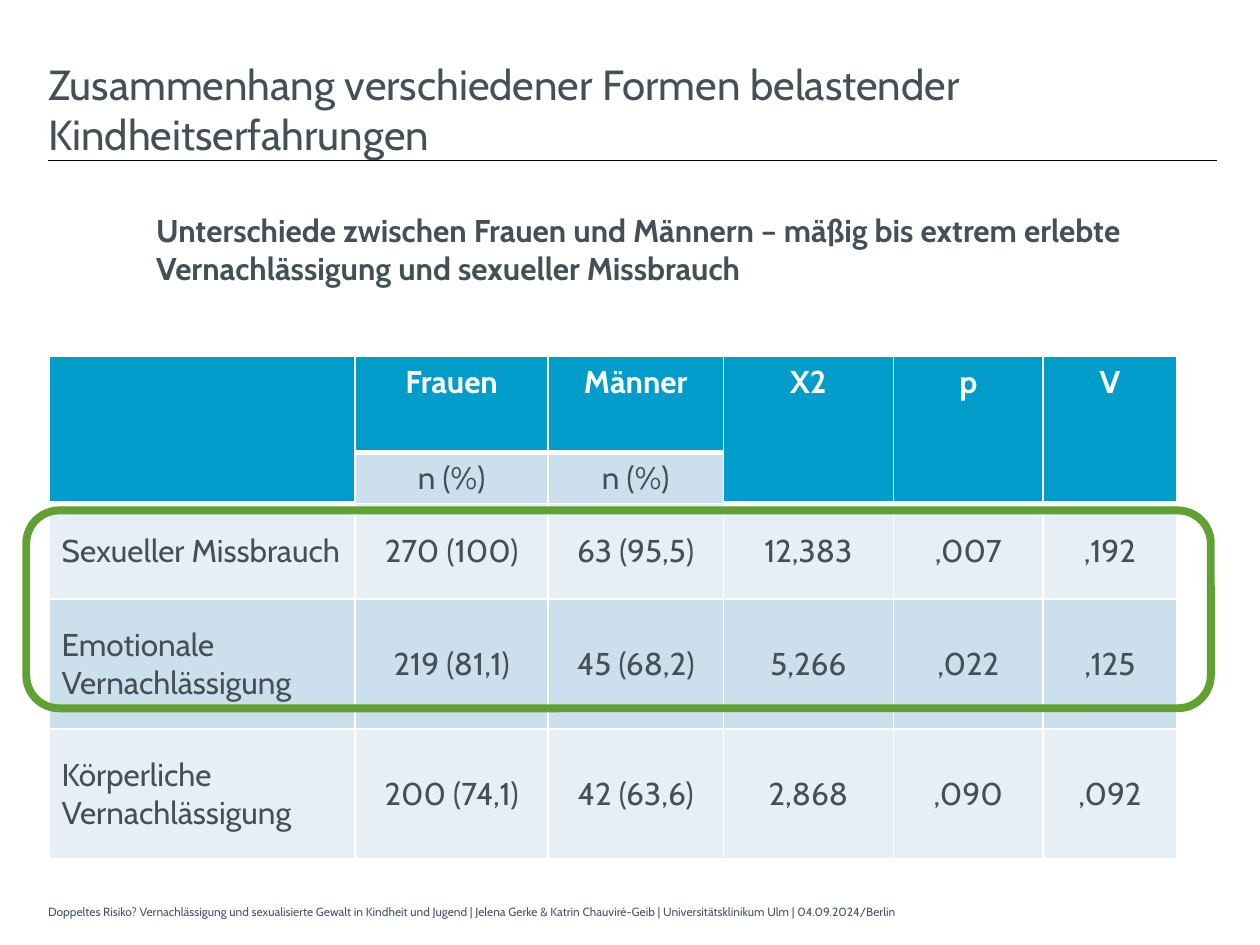
from lxml import etree
from pptx import Presentation
from pptx.dml.color import RGBColor
from pptx.enum.shapes import MSO_CONNECTOR, MSO_SHAPE
from pptx.enum.text import MSO_ANCHOR, MSO_AUTO_SIZE, PP_ALIGN
from pptx.oxml.ns import qn
from pptx.util import Cm, Pt

LEFT, CENTER = PP_ALIGN.LEFT, PP_ALIGN.CENTER
TOP, MIDDLE = MSO_ANCHOR.TOP, MSO_ANCHOR.MIDDLE
NO_AUTOFIT = MSO_AUTO_SIZE.NONE
STRAIGHT = MSO_CONNECTOR.STRAIGHT
ROUND_RECT = MSO_SHAPE.ROUNDED_RECTANGLE

HEADER = ["", "Frauen", "Männer", "X2", "p", "V"]
SUBHEADER = ["", "n (%)", "n (%)", "", "", ""]
BODY = [
    ["Sexueller Missbrauch", "270 (100)", "63 (95,5)", "12,383", ",007", ",192"],
    ["Emotionale Vernachlässigung", "219 (81,1)", "45 (68,2)", "5,266", ",022", ",125"],
    ["Körperliche Vernachlässigung", "200 (74,1)", "42 (63,6)", "2,868", ",090", ",092"],
]
MERGED_COLS = (0, 3, 4, 5)
COL_WIDTHS = [6.17, 3.89, 3.53, 3.43, 3.02, 2.69]
ROW_HEIGHTS = [1.93, 1.02, 1.93, 2.62, 2.62]


def rgb(value):
    return RGBColor.from_string(value)


class Deck:
    FONT = "Cabin"
    TEXT = "445055"
    WHITE = "FFFFFF"
    BLUE = "009DCA"
    BANDS = ("E7EFF6", "CCDFEC")

    def __init__(self, prs):
        self.s = prs.slides.add_slide(prs.slide_layouts[5])

    def set_text(self, tf, text, size, color=TEXT, bold=False, align=LEFT):
        p = tf.paragraphs[0]
        p.text = text
        p.alignment = align
        f = p.font
        f.name, f.size, f.bold = self.FONT, Pt(size), bold
        f.color.rgb = rgb(color)

    def frame(self, sp, margins, anchor):
        tf = sp.text_frame
        tf.word_wrap = True
        tf.auto_size = NO_AUTOFIT
        tf.vertical_anchor = anchor
        tf.margin_left, tf.margin_top, tf.margin_right, tf.margin_bottom = map(Cm, margins)
        return tf

    def title(self, text, box, size):
        sp = self.s.shapes.title
        sp.left, sp.top, sp.width, sp.height = map(Cm, box)
        self.set_text(self.frame(sp, (0, 0.15, 0, 0.1), TOP), text, size)

    def text(self, text, box, size, margins=(0, 0.15, 0, 0.1), anchor=TOP, **style):
        sp = self.s.shapes.add_textbox(*map(Cm, box))
        self.set_text(self.frame(sp, margins, anchor), text, size, **style)

    def line(self, ends, color, width):
        c = self.s.shapes.add_connector(STRAIGHT, *map(Cm, ends))
        c.line.color.rgb = rgb(color)
        c.line.width = Pt(width)
        etree.SubElement(c._element.spPr, qn("a:effectLst"))

    def outline(self, box, color, width):
        sp = self.s.shapes.add_shape(ROUND_RECT, *map(Cm, box))
        sp.shadow.inherit = False
        sp.fill.background()
        sp.line.color.rgb = rgb(color)
        sp.line.width = Pt(width)

    def borders(self, cell, top, bottom):
        tcPr = cell._tc.get_or_add_tcPr()
        for side, width in (("L", 1), ("R", 1), ("T", top), ("B", bottom)):
            ln = etree.SubElement(tcPr, qn(f"a:ln{side}"), w=str(Pt(width)))
            fill = etree.SubElement(ln, qn("a:solidFill"))
            etree.SubElement(fill, qn("a:srgbClr"), val=self.WHITE)

    def table(self, rows, left, top):
        size = (Cm(sum(COL_WIDTHS)), Cm(sum(ROW_HEIGHTS)))
        t = self.s.shapes.add_table(len(rows), len(HEADER), Cm(left), Cm(top), *size).table
        for col, width in zip(t.columns, COL_WIDTHS):
            col.width = Cm(width)
        for row, height in zip(t.rows, ROW_HEIGHTS):
            row.height = Cm(height)
        for c in MERGED_COLS:
            t.cell(0, c).merge(t.cell(1, c))
        for r, values in enumerate(rows):
            for c, value in enumerate(values):
                cell = t.cell(r, c)
                head = r == 0 or (r == 1 and c in MERGED_COLS)
                below_head = r == 1 or (r == 2 and c in MERGED_COLS)
                self.borders(cell, 3 if below_head else 1, 3 if head else 1)
                cell.fill.solid()
                cell.fill.fore_color.rgb = rgb(self.BLUE if head else self.BANDS[r % 2])
                cell.vertical_anchor = TOP if head else MIDDLE
                self.set_text(cell.text_frame, value, 18, self.WHITE if head else self.TEXT,
                              head, CENTER if c else LEFT)


def main():
    prs = Presentation()
    prs.slide_width, prs.slide_height = Cm(25.4), Cm(19.05)
    d = Deck(prs)
    d.line((0.97, 3.23, 24.54, 3.23), "000000", 0.5)
    d.text("Doppeltes Risiko? Vernachlässigung und sexualisierte Gewalt in Kindheit und Jugend "
           "| Jelena Gerke & Katrin Chauviré-Geib | Universitätsklinikum Ulm | 04.09.2024/Berlin",
           (0.97, 18.06, 17.63, 0.64), 6.8, (0, 0.13, 0.25, 0.13), MIDDLE, color="44546A")
    d.text("Unterschiede zwischen Frauen und Männern – mäßig bis extrem erlebte "
           "Vernachlässigung und sexueller Missbrauch",
           (3.15, 4.11, 20.57, 2.24), 18, bold=True)
    d.table([HEADER, SUBHEADER, *BODY], 0.99, 7.19)
    d.outline((0.53, 10.29, 23.88, 3.99), "61A032", 4.5)
    d.title("Zusammenhang verschiedener Formen belastender Kindheitserfahrungen",
            (0.97, 1.02, 18.72, 2.24), 24)
    prs.save("out.pptx")


if __name__ == "__main__":
    main()
